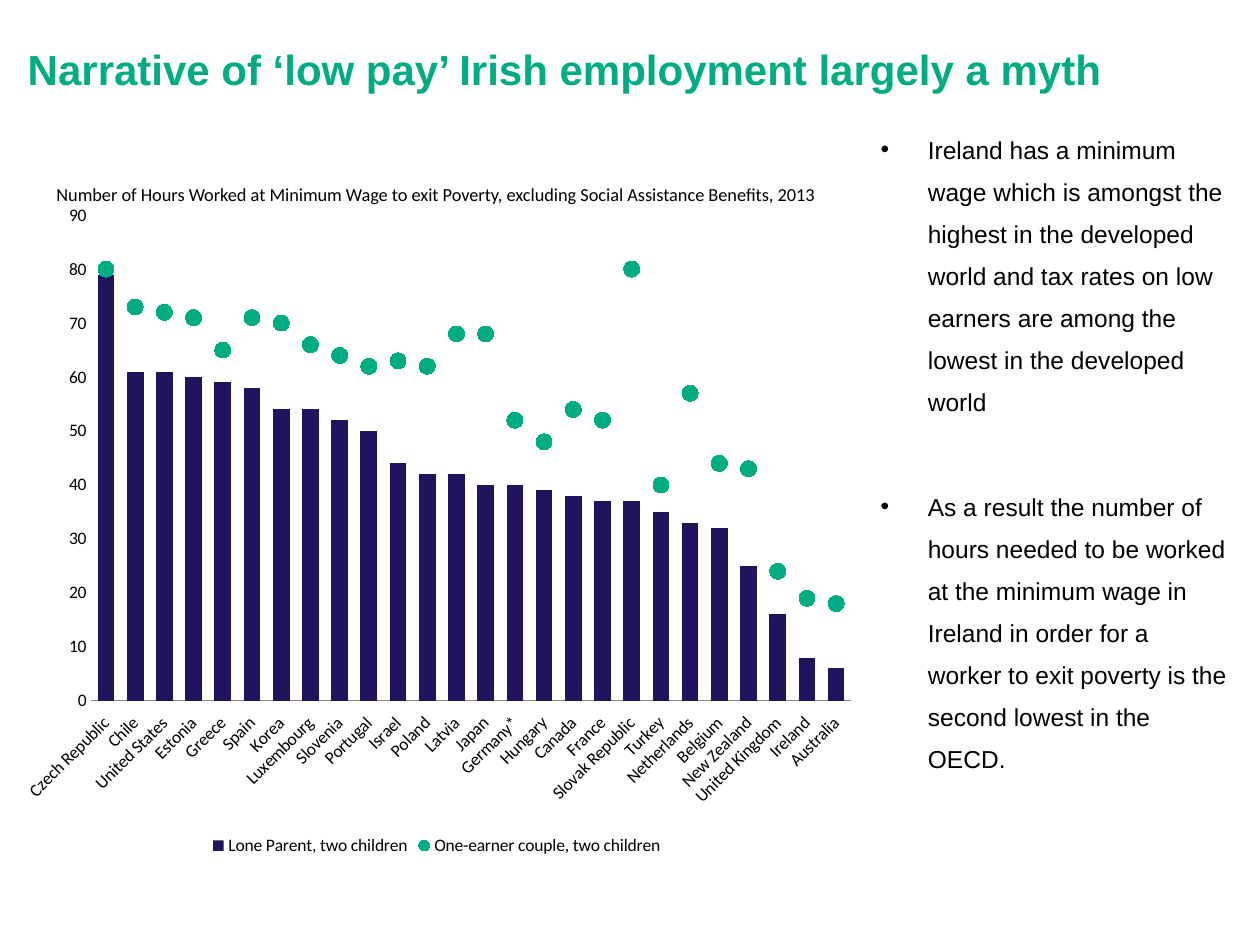
"""Build the slide on hours of minimum-wage work needed to exit poverty."""
from lxml import etree
from pptx import Presentation
from pptx import util as u
from pptx.chart.data import CategoryChartData
from pptx.dml.color import RGBColor
from pptx.enum import chart as c, text
from pptx.oxml import parse_xml
from pptx.oxml.ns import nsdecls, qn

GREEN = RGBColor(0x00, 0xAD, 0x83)
NAVY = RGBColor(0x1F, 0x14, 0x5D)
BLACK = RGBColor(0, 0, 0)
WHITE = RGBColor(0xFF, 0xFF, 0xFF)
GREY = RGBColor(0x86, 0x86, 0x86)

HOURS = [
    ("Czech Republic", 79, 80), ("Chile", 61, 73), ("United States", 61, 72),
    ("Estonia", 60, 71), ("Greece", 59, 65), ("Spain", 58, 71),
    ("Korea", 54, 70), ("Luxembourg", 54, 66), ("Slovenia", 52, 64),
    ("Portugal", 50, 62), ("Israel", 44, 63), ("Poland", 42, 62),
    ("Latvia", 42, 68), ("Japan", 40, 68), ("Germany*", 40, 52),
    ("Hungary", 39, 48), ("Canada", 38, 54), ("France", 37, 52),
    ("Slovak Republic", 37, 80), ("Turkey", 35, 40), ("Netherlands", 33, 57),
    ("Belgium", 32, 44), ("New Zealand", 25, 43), ("United Kingdom", 16, 24),
    ("Ireland", 8, 19), ("Australia", 6, 18),
]
POINTS = [
    "Ireland has a minimum wage which is amongst the highest in the developed world "
    "and tax rates on low earners are among the lowest in the developed world",
    "As a result the number of hours needed to be worked at the minimum wage in Ireland "
    "in order for a worker to exit poverty is the second lowest in the OECD.",
]


def set_values(target, values):
    for name, value in values.items():
        setattr(target, name, value)


def set_font(font, color, **values):
    set_values(font, values)
    font.color.rgb = color


presentation = Presentation()
set_values(presentation, {"slide_width": u.Pt(720), "slide_height": u.Pt(540)})
slide = presentation.slides.add_slide(presentation.slide_layouts[5])

title = slide.shapes.title
set_values(title, {"left": u.Pt(8.64), "top": u.Pt(0), "width": u.Pt(648), "height": u.Pt(90)})
set_values(title.text_frame, {
    "text": "Narrative of ‘low pay’ Irish employment largely a myth",
    "word_wrap": True,
    "auto_size": text.MSO_AUTO_SIZE.NONE,
    "vertical_anchor": text.MSO_ANCHOR.TOP,
})
paragraph = title.text_frame.paragraphs[0]
set_values(paragraph, {"alignment": text.PP_ALIGN.LEFT, "line_spacing": u.Pt(50), "space_before": u.Pt(0)})
set_font(paragraph.font, GREEN, name="Arial", size=u.Pt(24), bold=True)

caption = slide.shapes.add_textbox(u.Pt(25.2), u.Pt(95), u.Pt(458.6), u.Pt(32.4))
set_values(caption.text_frame, {
    "text": "Number of Hours Worked at Minimum Wage to exit Poverty, "
            "excluding Social Assistance Benefits, 2013",
    "word_wrap": False,
    "vertical_anchor": text.MSO_ANCHOR.MIDDLE,
})
set_font(caption.text_frame.paragraphs[0].font, BLACK, name="Calibri", size=u.Pt(10.5))

countries, lone_parent, couple = zip(*HOURS)
chart_data = CategoryChartData(number_format="0")
chart_data.categories = countries
chart_data.add_series("Lone Parent, two children", lone_parent)
chart_data.add_series("One-earner couple, two children", couple)
chart = slide.shapes.add_chart(
    c.XL_CHART_TYPE.COLUMN_CLUSTERED, u.Pt(2.88), u.Pt(111.6), u.Pt(493.2), u.Pt(380.2), chart_data
).chart
set_values(chart, {"has_title": False, "has_legend": True})
set_values(chart.legend, {"position": c.XL_LEGEND_POSITION.BOTTOM, "include_in_layout": False})
set_font(chart.font, BLACK, name="Calibri", size=u.Pt(10))

columns = chart.plots[0]
set_values(columns, {"gap_width": 75, "overlap": -25, "vary_by_categories": False})
columns.series[0].format.fill.solid()
columns.series[0].format.fill.fore_color.rgb = NAVY

bar_chart = chart._chartSpace.find(".//" + qn("c:barChart"))
couple_series = bar_chart.findall(qn("c:ser"))[1]
for bar_only in couple_series.findall(qn("c:invertIfNegative")):
    couple_series.remove(bar_only)
line_chart = parse_xml(
    f'<c:lineChart {nsdecls("c")}><c:grouping val="standard"/><c:varyColors val="0"/>'
    '<c:marker val="1"/></c:lineChart>'
)
line_chart.insert(2, couple_series)
for axis_id in bar_chart.findall(qn("c:axId")):
    etree.SubElement(line_chart, qn("c:axId")).set("val", axis_id.get("val"))
bar_chart.addnext(line_chart)

markers = chart.plots[1].series[0]
markers.smooth = False
markers.format.line.fill.background()
set_values(markers.marker, {"style": c.XL_MARKER_STYLE.CIRCLE, "size": 9})
markers.marker.format.fill.solid()
markers.marker.format.fill.fore_color.rgb = GREEN
markers.marker.format.line.color.rgb = GREEN

for axis in (chart.category_axis, chart.value_axis):
    set_values(axis, {"major_tick_mark": c.XL_TICK_MARK.NONE, "minor_tick_mark": c.XL_TICK_MARK.NONE})
    set_font(axis.tick_labels.font, BLACK, name="Calibri", size=u.Pt(10))
chart.category_axis.tick_label_position = c.XL_TICK_LABEL_POSITION.LOW
chart.category_axis.format.line.color.rgb = GREY
chart._chartSpace.find(f".//{qn('c:catAx')}/{qn('c:txPr')}/{qn('a:bodyPr')}").set("rot", "-2700000")
set_values(chart.value_axis, {"minimum_scale": 0, "maximum_scale": 90, "major_unit": 10})
set_values(chart.value_axis.tick_labels, {"number_format": "0", "number_format_is_linked": False})
chart.value_axis.format.line.fill.background()
gridlines = chart.value_axis.major_gridlines.format.line
gridlines.color.rgb = WHITE
gridlines.width = u.Pt(0.75)

plot_area = chart._chartSpace.find(".//" + qn("c:plotArea"))
for old_layout in plot_area.findall(qn("c:layout")):
    plot_area.remove(old_layout)
layout = etree.Element(qn("c:layout"))
manual = etree.SubElement(layout, qn("c:manualLayout"))
for tag, value in (("layoutTarget", "inner"), ("xMode", "edge"), ("yMode", "edge"),
                   ("x", "0.1"), ("y", "0.03"), ("w", "0.88"), ("h", "0.73")):
    etree.SubElement(manual, qn("c:" + tag)).set("val", value)
plot_area.insert(0, layout)

body = slide.shapes.add_textbox(u.Pt(496.1), u.Pt(66.2), u.Pt(212.4), u.Pt(339.8))
body.text_frame.word_wrap = True
for index, point in enumerate(POINTS):
    paragraph = body.text_frame.paragraphs[0] if index == 0 else body.text_frame.add_paragraph()
    paragraph.text = point
    set_values(paragraph, {
        "line_spacing": u.Pt(24), "space_before": u.Pt(30 * index), "space_after": u.Pt(6),
    })
    properties = paragraph._p.get_or_add_pPr()
    properties.set("marL", str(u.Pt(27)))
    properties.set("indent", str(u.Pt(-27)))
    etree.SubElement(properties, qn("a:buFont")).set("typeface", "Arial")
    etree.SubElement(properties, qn("a:buChar")).set("char", "•")
    set_font(paragraph.font, BLACK, name="Arial", size=u.Pt(14))

presentation.save("out.pptx")
